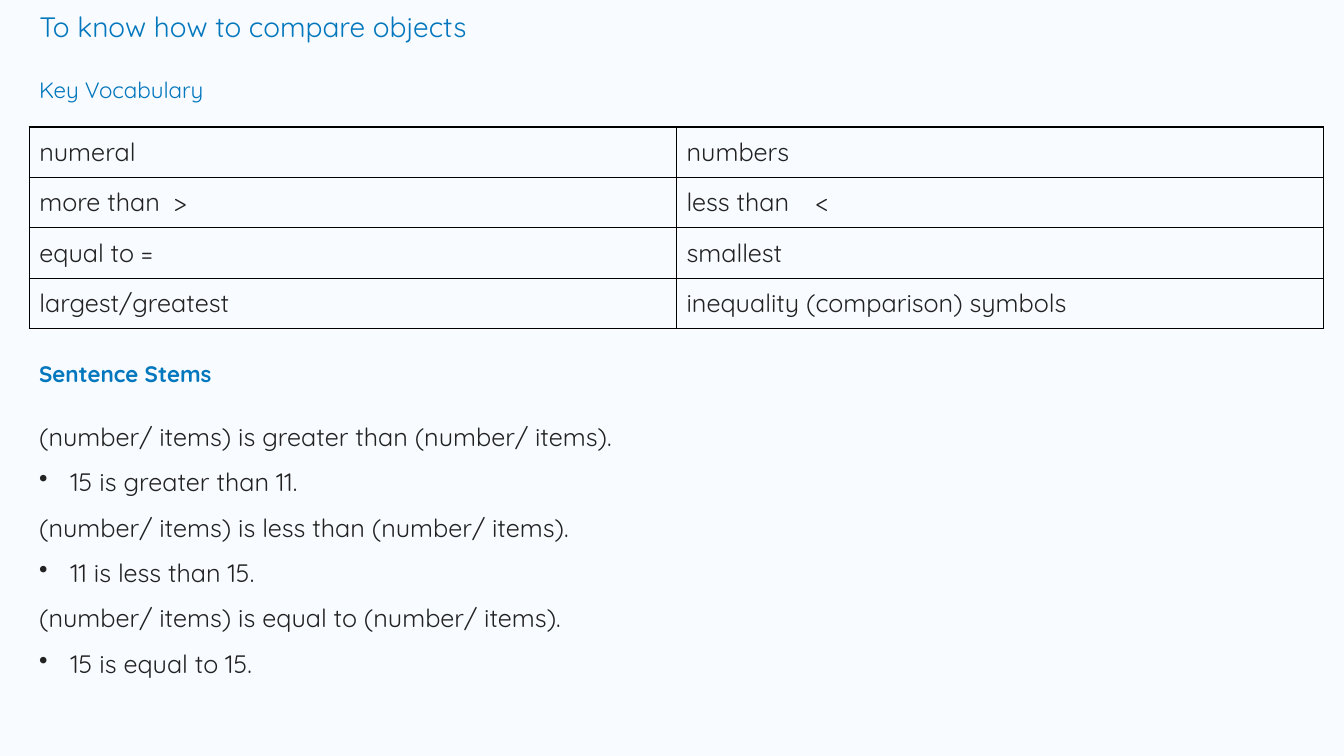
from lxml import etree
from pptx import Presentation
from pptx.dml.color import RGBColor
from pptx.enum.text import MSO_ANCHOR, PP_ALIGN
from pptx.oxml.ns import qn
from pptx.util import Inches, Pt

TOP, MIDDLE = MSO_ANCHOR.TOP, MSO_ANCHOR.MIDDLE
LEFT = PP_ALIGN.LEFT
BACKGROUND = RGBColor(0xF8, 0xFB, 0xFF)
BLUE = RGBColor(0x02, 0x77, 0xBD)
INK = RGBColor(0x22, 0x22, 0x22)
BORDER = RGBColor(0x00, 0x00, 0x00)
FONT = "Quicksand"
TITLE_ONLY = 5

VOCABULARY = [
    ("numeral", "numbers"),
    ("more than\t>", "less than\t<"),
    ("equal to =", "smallest"),
    ("largest/greatest", "inequality (comparison) symbols"),
]
SYMBOL_TABS = (1.33, 1.28)
STEMS = [
    ("(number/ items) is greater than (number/ items).", "15 is greater than 11."),
    ("(number/ items) is less than (number/ items).", "11 is less than 15."),
    ("(number/ items) is equal to (number/ items).", "15 is equal to 15."),
]


def style(p, size, color, bold=False):
    """Set the alignment and font of a paragraph."""
    p.alignment = LEFT
    p.font.name, p.font.size, p.font.bold = FONT, Pt(size), bold
    p.font.color.rgb = color


def place(sp, left, top, width, height):
    """Move a shape to a box given in inches."""
    sp.left, sp.top = Inches(left), Inches(top)
    sp.width, sp.height = Inches(width), Inches(height)


def add_title(s, text, left, top, width, height):
    """Fill and format the title placeholder."""
    sp = s.shapes.title
    place(sp, left, top, width, height)
    tf = sp.text_frame
    tf.text = text
    tf.word_wrap = True
    tf.vertical_anchor = TOP
    style(tf.paragraphs[0], 20, BLUE)


def add_text_box(s, left, top, width, height):
    """Add a wrapping text box and return its text frame."""
    sp = s.shapes.add_textbox(*map(Inches, (left, top, width, height)))
    sp.text_frame.word_wrap = True
    return sp.text_frame


def add_heading(s, text, left, top, bold=False):
    """Add a section heading."""
    tf = add_text_box(s, left, top, 2.97, 0.46)
    tf.text = text
    style(tf.paragraphs[0], 16, BLUE, bold)


def add_tab(p, position):
    """Add a left tab stop to a paragraph."""
    tabs = etree.SubElement(p._p.get_or_add_pPr(), qn("a:tabLst"))
    etree.SubElement(tabs, qn("a:tab"), pos=str(Inches(position)), algn="l")


def add_borders(cell):
    """Draw a thin line on all four sides of a cell."""
    tc_pr = cell._tc.get_or_add_tcPr()
    for i, side in enumerate(("lnL", "lnR", "lnT", "lnB")):
        ln = etree.Element(qn(f"a:{side}"), w=str(Pt(1)))
        fill = etree.SubElement(ln, qn("a:solidFill"))
        etree.SubElement(fill, qn("a:srgbClr"), val=str(BORDER))
        tc_pr.insert(i, ln)


def add_vocabulary(s, left, top, width, height):
    """Add the vocabulary table with equal rows and columns."""
    frame = s.shapes.add_table(len(VOCABULARY), len(VOCABULARY[0]),
                               *map(Inches, (left, top, width, height)))
    table = frame.table
    table.first_row = table.horz_banding = False
    for r, words in enumerate(VOCABULARY):
        for c, word in enumerate(words):
            cell = table.cell(r, c)
            cell.fill.background()
            cell.vertical_anchor = MIDDLE
            cell.margin_left = cell.margin_right = Inches(0.1)
            cell.margin_top = cell.margin_bottom = Inches(0.09)
            cell.text = word
            p = cell.text_frame.paragraphs[0]
            if "\t" in word:
                add_tab(p, SYMBOL_TABS[c])
            style(p, 18, INK)
            add_borders(cell)


def add_bullet(p, indent):
    """Give a paragraph a hanging bullet."""
    p_pr = p._p.get_or_add_pPr()
    p_pr.set("marL", str(Inches(indent)))
    p_pr.set("indent", str(-Inches(indent)))
    etree.SubElement(p_pr, qn("a:buChar"), char="•")


def add_stems(s, left, top, width, height):
    """Add each sentence stem with its bulleted example."""
    tf = add_text_box(s, left, top, width, height)
    lines = [line for pair in STEMS for line in pair]
    for i, line in enumerate(lines):
        p = tf.add_paragraph() if i else tf.paragraphs[0]
        p.text = line
        if i % 2:
            add_bullet(p, 0.31)
        p.line_spacing = 1.5
        style(p, 18, INK)


def main():
    """Build and save the slide."""
    prs = Presentation()
    prs.slide_width, prs.slide_height = Inches(13.33), Inches(7.5)
    s = prs.slides.add_slide(prs.slide_layouts[TITLE_ONLY])
    s.background.fill.solid()
    s.background.fill.fore_color.rgb = BACKGROUND
    left, width = 0.29, 12.84
    add_title(s, "To know how to compare objects", left, 0.04, 12.34, 0.44)
    add_heading(s, "Key Vocabulary", left, 0.71)
    add_vocabulary(s, left, 1.26, width, 2)
    add_heading(s, "Sentence Stems", left, 3.52, bold=True)
    add_stems(s, left, 3.98, width, 2.77)
    prs.save("out.pptx")


if __name__ == "__main__":
    main()
